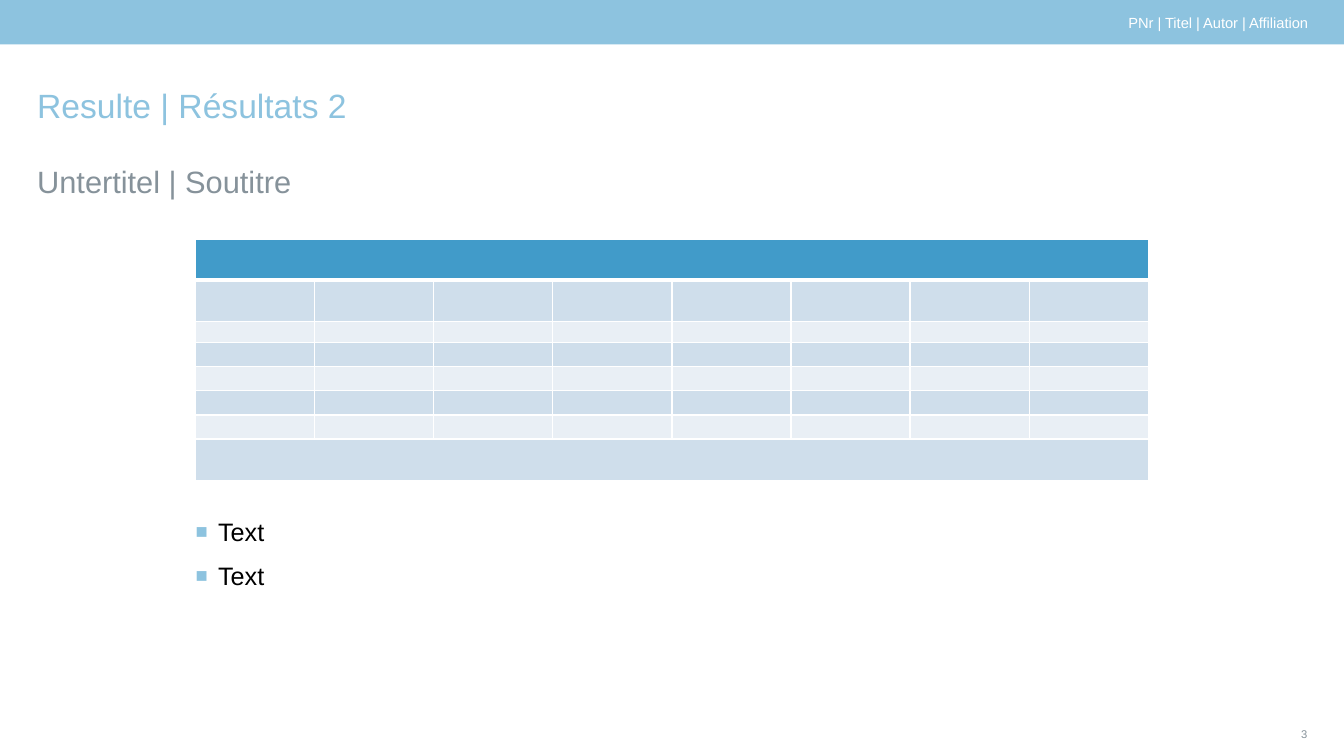
from lxml.etree import SubElement
from pptx import Presentation
from pptx.dml.color import RGBColor
from pptx.enum.shapes import MSO_SHAPE
from pptx.enum.text import MSO_ANCHOR, PP_ALIGN
from pptx.oxml.ns import qn
from pptx.util import Pt

SKY = RGBColor(0x8D, 0xC3, 0xDF)
GREY = RGBColor(0x86, 0x92, 0x9A)
BLACK = RGBColor(0, 0, 0)
WHITE = RGBColor(0xFF, 0xFF, 0xFF)
HEADER_BLUE = RGBColor(0x41, 0x9B, 0xC9)
BANDS = [RGBColor(0xE9, 0xEF, 0xF5), RGBColor(0xCF, 0xDE, 0xEB)]

TITLE = "Resulte | Résultats 2"
SUBTITLE = "Untertitel | Soutitre"
RUNNING_HEAD = "PNr | Titel | Autor | Affiliation"
PAGE_NUMBER = "3"
POINTS = ["Text", "Text"]

SLIDE_W, SLIDE_H = 960, 540
MARGIN = 26.6
CONTENT_X, CONTENT_W = 139.8, 680.4
TABLE_Y = 170.7
COLUMN_COUNT = 8
ROW_HEIGHTS = [29.5, 29.5, 15, 17.25, 17.25, 17.25, 17.25, 29.5]
MERGED_ROWS = (0, len(ROW_HEIGHTS) - 1)


def add_text(slide, box, lines, size, color, align=PP_ALIGN.LEFT,
             anchor=MSO_ANCHOR.TOP, wrap=True):
    frame = slide.shapes.add_textbox(*map(Pt, box)).text_frame
    frame.margin_left = frame.margin_right = 0
    frame.margin_top = frame.margin_bottom = 0
    frame.word_wrap = wrap
    frame.vertical_anchor = anchor
    frame.text = "\n".join(lines)
    for paragraph in frame.paragraphs:
        paragraph.alignment = align
        paragraph.font.name = "Arial"
        paragraph.font.size = Pt(size)
        paragraph.font.color.rgb = color
    return frame


def add_square_bullet(paragraph):
    properties = paragraph._p.get_or_add_pPr()
    properties.set("marL", str(Pt(16)))
    properties.set("indent", str(-Pt(16)))
    paragraph.line_spacing = 1.1
    paragraph.space_after = Pt(8)
    bullet_parts = [SubElement(properties, qn("a:buClr")),
                    SubElement(properties, qn("a:buSzPct"), val="80000"),
                    SubElement(properties, qn("a:buFont"), typeface="Arial"),
                    SubElement(properties, qn("a:buChar"), char="■")]
    SubElement(bullet_parts[0], qn("a:srgbClr"), val=str(SKY))
    # The schema wants bullets ahead of the default run properties.
    default_font = properties.find(qn("a:defRPr"))
    for part in bullet_parts:
        default_font.addprevious(part)


def style_cell(cell, color, bottom_width):
    cell.margin_left = cell.margin_right = 0
    cell.margin_top = cell.margin_bottom = 0
    properties = cell._tc.get_or_add_tcPr()
    for side, width in (("L", 1), ("R", 1), ("T", 1), ("B", bottom_width)):
        line = SubElement(properties, qn(f"a:ln{side}"), w=str(Pt(width)))
        SubElement(SubElement(line, qn("a:solidFill")),
                   qn("a:srgbClr"), val=str(WHITE))
    cell.fill.solid()
    cell.fill.fore_color.rgb = color
    # A small end mark keeps an empty row at its set height.
    SubElement(cell.text_frame.paragraphs[0]._p, qn("a:endParaRPr"), sz="800")


def add_results_table(slide):
    table = slide.shapes.add_table(
        len(ROW_HEIGHTS), COLUMN_COUNT, Pt(CONTENT_X), Pt(TABLE_Y),
        Pt(CONTENT_W), Pt(sum(ROW_HEIGHTS))).table
    for column in table.columns:
        column.width = Pt(CONTENT_W / COLUMN_COUNT)
    for r, height in enumerate(ROW_HEIGHTS):
        table.rows[r].height = Pt(height)
        color = HEADER_BLUE if r == 0 else BANDS[r % 2]
        for c in range(COLUMN_COUNT):
            style_cell(table.cell(r, c), color, 3 if r == 0 else 1)
    for r in MERGED_ROWS:
        table.cell(r, 0).merge(table.cell(r, COLUMN_COUNT - 1))


def main():
    deck = Presentation()
    deck.slide_width, deck.slide_height = Pt(SLIDE_W), Pt(SLIDE_H)
    slide = deck.slides.add_slide(deck.slide_layouts[6])

    band = slide.shapes.add_shape(MSO_SHAPE.RECTANGLE, 0, 0, Pt(SLIDE_W), Pt(31.7))
    band.shadow.inherit = False
    band.fill.solid()
    band.fill.fore_color.rgb = SKY
    band.line.fill.background()

    add_text(slide, (MARGIN, 60.5, 907, 44), [TITLE], 24, SKY, wrap=False)
    add_text(slide, (MARGIN, 116.6, 907, 26.6), [SUBTITLE], 22, GREY)
    add_text(slide, (910.8, 519.8, 23, 9.4), [PAGE_NUMBER], 8, GREY,
             PP_ALIGN.RIGHT, MSO_ANCHOR.MIDDLE)
    add_results_table(slide)
    points = add_text(slide, (CONTENT_X, 366.5, CONTENT_W, 114.5), POINTS, 18, BLACK)
    for paragraph in points.paragraphs:
        add_square_bullet(paragraph)
    add_text(slide, (524.2, 9.4, 410.4, 13), [RUNNING_HEAD], 10.5, WHITE,
             PP_ALIGN.RIGHT, MSO_ANCHOR.MIDDLE)

    deck.save("out.pptx")


if __name__ == "__main__":
    main()
